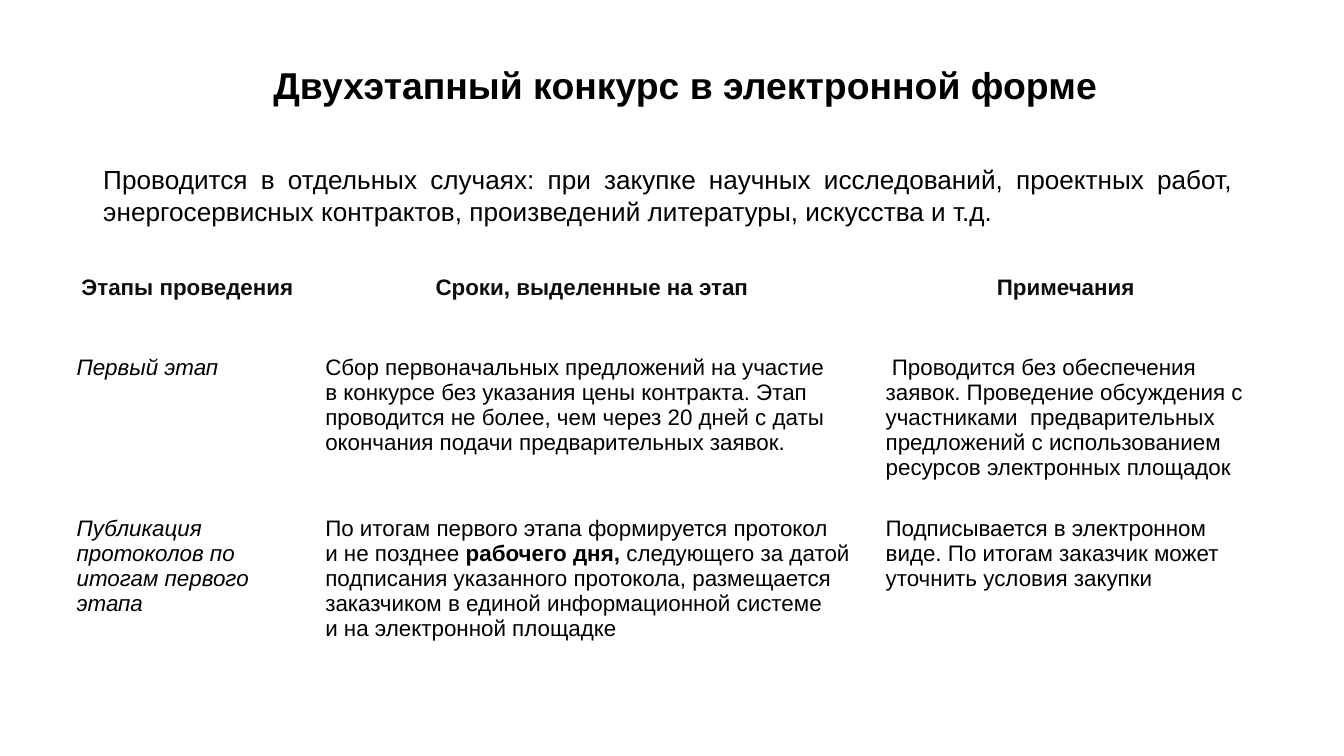
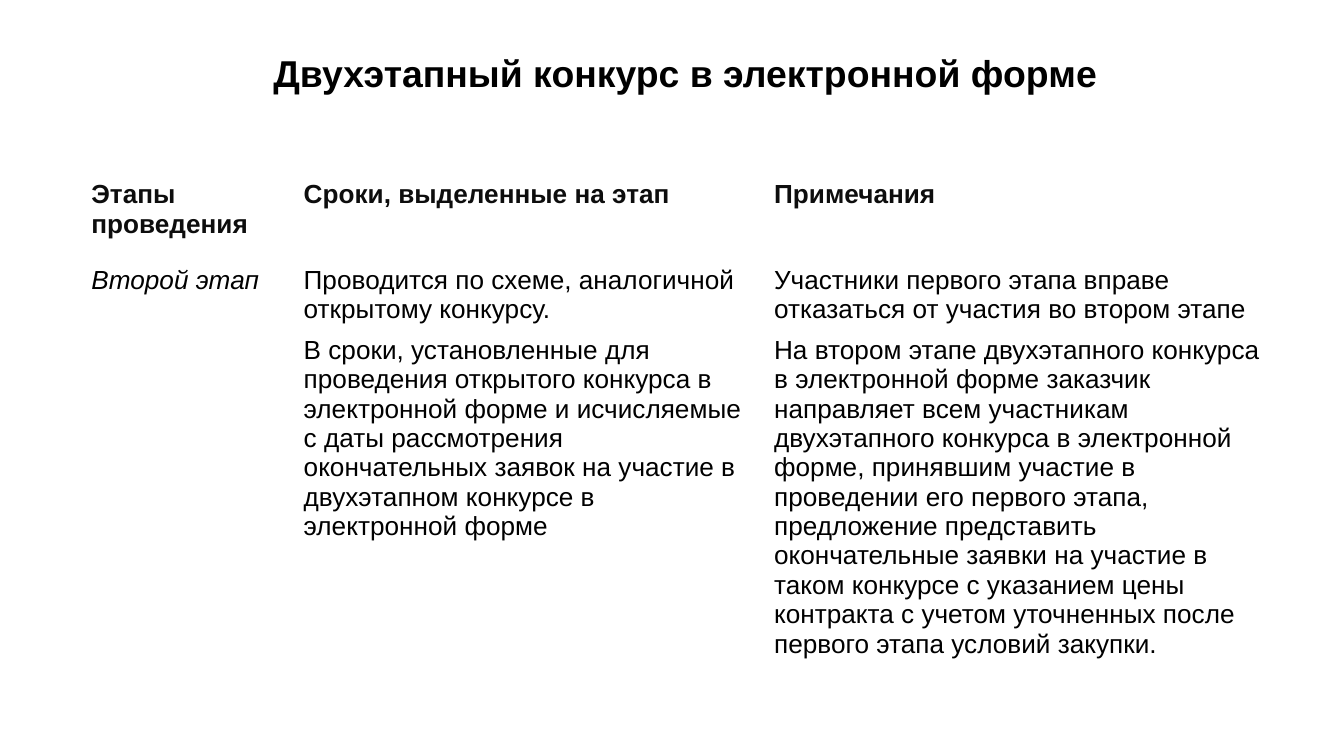
from pptx import Presentation
from pptx import util as u
from pptx.dml.color import RGBColor
from pptx.enum import text

# Content: cells hold paragraphs, paragraphs hold (wording, style) runs
TITLE = "Двухэтапный конкурс в электронной форме"
HEADS = ["Этапы проведения", "Сроки, выделенные на этап", "Примечания"]
INTRO = ("Проводится в отдельных случаях: при закупке научных исследований, "
         "проектных работ,  энергосервисных контрактов, произведений "
         "литературы, искусства и т.д.")

FIRST = [
    ["Первый этап",
     [[("Сбор первоначальных предложений на участие \nв конкурсе без указания "
        "цены контракта. Этап проводится не более, чем через 20 дней с даты "
        "окончания подачи предварительных заявок.", "body")]],
     [[(" Проводится без обеспечения заявок. Проведение обсуждения с "
        "участниками  предварительных предложений с использованием ресурсов "
        "электронных площадок", "body")]]],
    ["Публикация протоколов по итогам первого этапа",
     [[("По итогам первого этапа формируется протокол \nи не позднее ", "body"),
       ("рабочего дня,", "strong"),
       (" следующего за датой подписания указанного протокола, размещается "
        "заказчиком в единой информационной системе \nи на электронной "
        "площадке", "body")]],
     [[("Подписывается в электронном виде. По итогам заказчик может уточнить "
        "условия закупки", "body")]]],
]
SECOND = [
    ["Второй этап",
     [[("Проводится по схеме, аналогичной открытому конкурсу.", "body")],
      [("В сроки, установленные для проведения открытого конкурса в "
        "электронной форме и исчисляемые с даты рассмотрения окончательных "
        "заявок на участие в двухэтапном конкурсе в электронной форме",
        "body")]],
     [[("Участники первого этапа вправе отказаться от участия во втором этапе",
        "body")],
      [("На втором этапе двухэтапного конкурса в электронной форме заказчик "
        "направляет всем участникам двухэтапного конкурса в электронной "
        "форме, принявшим участие в проведении его первого этапа, предложение "
        "представить окончательные заявки на участие в таком конкурсе с "
        "указанием цены контракта с учетом уточненных после первого этапа "
        "условий закупки.", "body")]]],
]

WIDE = 8.9  # table width; the last column takes what the others leave
SLIDES = [
    dict(title=(0.2, 0.46, 9.8, 0.73), intro=(0.67, 1.17, 8.7, 0.77),
         place=(0.47, 1.97), cols=[1.85, 4.17], rows=[0.59, 1.19, 1.39],
         body=FIRST, size=12, after=0, align="CENTER"),
    dict(title=(0, 0.37, 10.2, 0.73), intro=None,
         place=(0.58, 1.26), cols=[1.58, 3.5], rows=[0.59, 2.48],
         body=SECOND, size=14, after=6, align="LEFT"),
]

# Shared look
COLORS = {"ink": "000000", "head": "0D0D0D"}
FONT = "Arial"
STYLES = {
    "head": dict(bold=True, italic=False, color="head"),
    "stage": dict(bold=False, italic=True, color="ink"),
    "body": dict(bold=False, italic=False, color="ink"),
    "strong": dict(bold=True, italic=False, color="ink"),
}
PADS = dict(margin_left=0.1, margin_top=0.08, margin_right=0.1,
            margin_bottom=0.12)


def assign(item, values):
    for key, val in values.items():
        setattr(item, key, val)


def place(shape, box):
    names = ("left", "top", "width", "height")
    assign(shape, {n: u.Inches(v) for n, v in zip(names, box)})


def write(frame, paras, size, align="LEFT", after=0):
    """Fill a text frame; a newline in a run becomes a line break."""
    for num, runs in enumerate(paras):
        para = frame.add_paragraph() if num else frame.paragraphs[0]
        para.alignment = getattr(text.PP_ALIGN, align)
        para.space_after = u.Pt(after)
        for words, style in runs:
            look = dict(STYLES[style])
            color = RGBColor.from_string(COLORS[look.pop("color")])
            for idx, line in enumerate(words.split("\n")):
                if idx:
                    para.add_line_break()
                run = para.add_run()
                run.text = line
                assign(run.font, dict(look, name=FONT, size=u.Pt(size)))
                run.font.color.rgb = color


def add_title(slide, box):
    title = slide.shapes.title
    place(title, box)
    frame = title.text_frame
    assign(frame, dict.fromkeys(PADS, 0))
    assign(frame, dict(word_wrap=True, auto_size=text.MSO_AUTO_SIZE.NONE,
                       vertical_anchor=text.MSO_ANCHOR.TOP))
    write(frame, [[(TITLE, "strong")]], 20, "CENTER")


def add_intro(slide, box):
    frame = slide.shapes.add_textbox(*map(u.Inches, box)).text_frame
    assign(frame, dict(word_wrap=True,
                       auto_size=text.MSO_AUTO_SIZE.SHAPE_TO_FIT_TEXT))
    write(frame, [[(INTRO, "body")]], 14, "JUSTIFY")


def add_stages(slide, data):
    cols = data["cols"] + [WIDE - sum(data["cols"])]
    rows = data["rows"]
    box = (*data["place"], WIDE, sum(rows))
    table = slide.shapes.add_table(len(rows), len(cols),
                                   *map(u.Inches, box)).table
    assign(table, dict(first_row=False, horz_banding=False))
    for col, width in zip(table.columns, cols):
        col.width = u.Inches(width)
    for row, height in zip(table.rows, rows):
        row.height = u.Inches(height)
    for r, line in enumerate([HEADS] + data["body"]):
        for c, item in enumerate(line):
            cell = table.cell(r, c)
            cell.fill.background()
            assign(cell, {k: u.Inches(v) for k, v in PADS.items()})
            if isinstance(item, str):
                item = [[(item, "stage" if r else "head")]]
            write(cell.text_frame, item, data["size"],
                  "LEFT" if r else data["align"], data["after"])


def main():
    prs = Presentation()
    wide = u.Inches(10)
    assign(prs, dict(slide_width=wide, slide_height=wide * 9 // 16))
    for data in SLIDES:
        slide = prs.slides.add_slide(prs.slide_layouts[5])
        add_title(slide, data["title"])
        if data["intro"]:
            add_intro(slide, data["intro"])
        add_stages(slide, data)
    prs.save("out.pptx")


if __name__ == "__main__":
    main()
